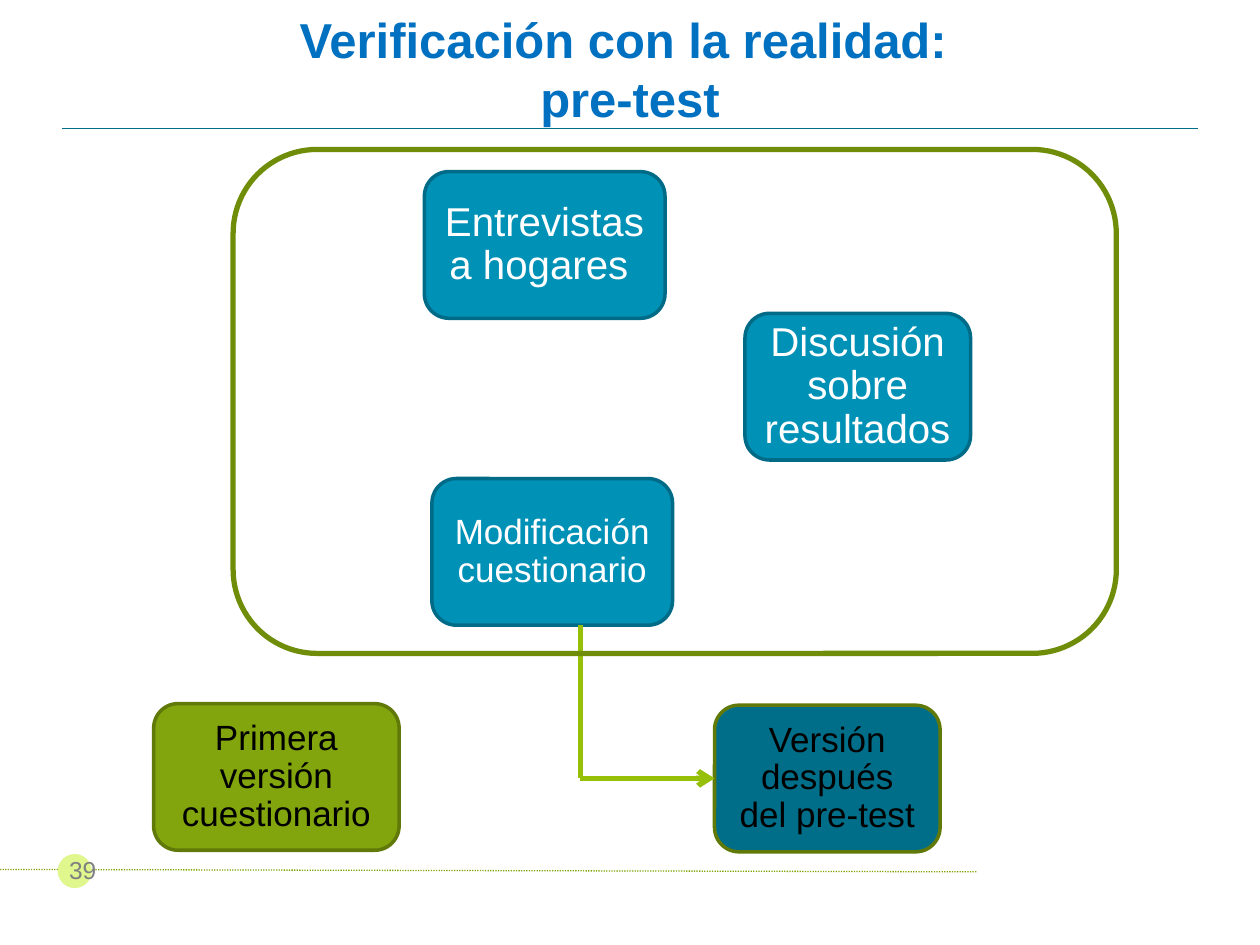
from lxml import etree
from pptx import Presentation
from pptx.dml.color import RGBColor
from pptx.enum import dml, shapes, text
from pptx.oxml import ns
from pptx.util import Pt

BLUE = RGBColor(0x00, 0x70, 0xC0)
TEAL = RGBColor(0x00, 0x91, 0xB7)
TEAL_EDGE = RGBColor(0x00, 0x6B, 0x87)
DARK_TEAL = RGBColor(0x00, 0x6E, 0x89)
GREEN = RGBColor(0x82, 0xA4, 0x0C)
GREEN_EDGE = RGBColor(0x60, 0x79, 0x09)
FRAME = RGBColor(0x70, 0x8D, 0x0A)
ARROW = RGBColor(0x96, 0xBF, 0x08)
DOTS = RGBColor(0x81, 0xA4, 0x08)
LIME = RGBColor(0xDF, 0xF7, 0x8C)
GRAY = RGBColor(0x80, 0x80, 0x80)
WHITE = RGBColor(0xFF, 0xFF, 0xFF)
BLACK = RGBColor(0x00, 0x00, 0x00)

TITLE = "Verificación con la realidad: \vpre-test"
PAGE = "39"
BOX_HEIGHT = 83.8
BOX_INSET = 6.8
STEPS = [
    ("Entrevistas a hogares ", 242.5, 98.1, 137.5, 23, WHITE, TEAL, TEAL_EDGE),
    ("Discusión sobre resultados", 425.7, 179.1, 128.9, 23, WHITE, TEAL, TEAL_EDGE),
    ("Modificación\vcuestionario", 246.8, 273.5, 137.5, 20, WHITE, TEAL, TEAL_EDGE),
    ("Primera versión cuestionario", 87.8, 402.1, 140.3, 20, BLACK, GREEN, GREEN_EDGE),
    ("Versión después del pre-test", 408.3, 403, 128.9, 20, BLACK, DARK_TEAL, GREEN_EDGE),
]
ELBOW_X, ELBOW_Y = 331.7, 444.8

prs = Presentation()
prs.slide_width, prs.slide_height = Pt(720), Pt(540)
s = prs.slides.add_slide(prs.slide_layouts[6])


def write(sp, words, size, color, bold=False, align=text.PP_ALIGN.CENTER, spacing=1.0, inset=None):
    tf = sp.text_frame
    tf.word_wrap = True
    tf.vertical_anchor = text.MSO_ANCHOR.MIDDLE
    if inset is not None:
        tf.margin_left = tf.margin_right = tf.margin_top = tf.margin_bottom = Pt(inset)
    p = tf.paragraphs[0]
    p.text = words
    p.alignment, p.line_spacing = align, spacing
    for r in p.runs:
        r.font.name, r.font.size, r.font.bold = "Arial", Pt(size), bold
        r.font.color.rgb = color


def add_text(x, y, w, h, words, **style):
    write(s.shapes.add_textbox(Pt(x), Pt(y), Pt(w), Pt(h)), words, **style)


def add_shape(kind, x, y, w, h, fill=None, edge=None, width=2):
    sp = s.shapes.add_shape(kind, Pt(x), Pt(y), Pt(w), Pt(h))
    sp.shadow.inherit = False
    for part, color in ((sp.fill, fill), (sp.line.fill, edge)):
        if color is None:
            part.background()
        else:
            part.solid()
            part.fore_color.rgb = color
    if edge is not None:
        sp.line.width = Pt(width)
    return sp


def add_line(x1, y1, x2, y2, color, width, dash=None, arrow=False):
    c = s.shapes.add_connector(shapes.MSO_CONNECTOR.STRAIGHT, Pt(x1), Pt(y1), Pt(x2), Pt(y2))
    c.line.color.rgb, c.line.width = color, Pt(width)
    if dash is not None:
        c.line.dash_style = dash
    if arrow:
        etree.SubElement(c.line._get_or_add_ln(), ns.qn("a:tailEnd"), type="arrow")
    etree.SubElement(c._element.spPr, ns.qn("a:effectLst"))


ROUNDED = shapes.MSO_SHAPE.ROUNDED_RECTANGLE

add_line(0, 496.8, 558, 498.2, DOTS, 0.75, dash=dml.MSO_LINE.ROUND_DOT)
add_shape(shapes.MSO_SHAPE.OVAL, 33, 488, 19.5, 19.5, fill=LIME)
add_line(35.5, 73.5, 684.5, 73.5, DARK_TEAL, 0.75)
add_text(36, 13.7, 648, 50.4, TITLE, size=28, color=BLUE, bold=True)
add_text(32.4, 482.4, 167.8, 28.8, PAGE, size=14, color=GRAY, align=text.PP_ALIGN.LEFT)

for words, x, y, w, size, color, fill, edge in STEPS:
    sp = add_shape(ROUNDED, x, y, w, BOX_HEIGHT, fill, edge)
    write(sp, words, size, color, spacing=0.9, inset=BOX_INSET)

add_line(ELBOW_X, STEPS[2][2] + BOX_HEIGHT, ELBOW_X, ELBOW_Y, ARROW, 3)
add_line(ELBOW_X, ELBOW_Y, STEPS[4][1], ELBOW_Y, ARROW, 3, arrow=True)
add_shape(ROUNDED, 133.2, 85.4, 504.7, 288, edge=FRAME, width=3)

prs.save("out.pptx")
